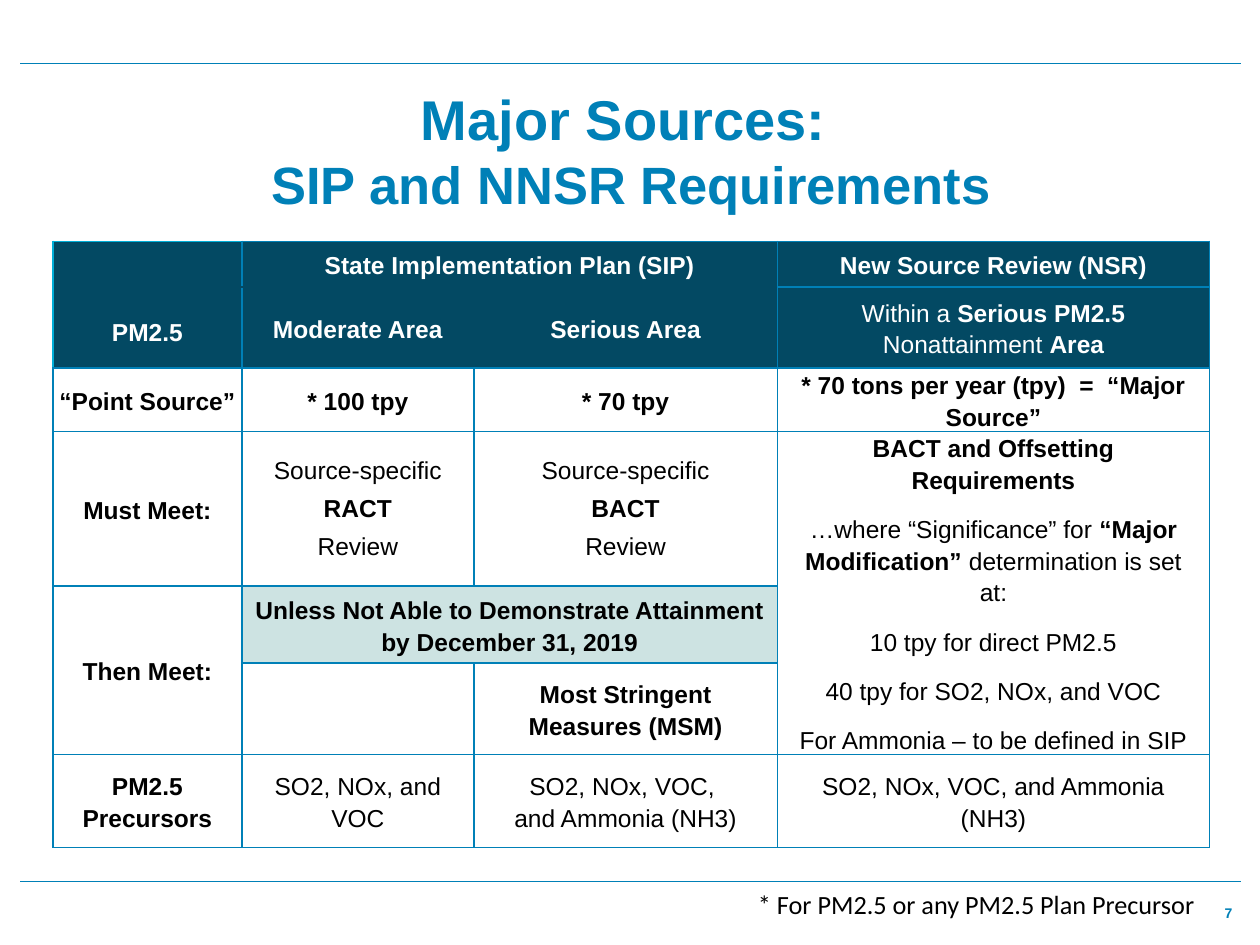
from lxml import etree
from pptx import Presentation
from pptx.dml.color import RGBColor
from pptx.enum import shapes, text
from pptx.oxml import ns
from pptx.util import Pt

BLUE = RGBColor(0x00, 0x80, 0xB7)
CYAN = RGBColor(0x00, 0xAF, 0xD8)
NAVY = RGBColor(0x03, 0x49, 0x63)
MINT = RGBColor(0xCD, 0xE3, 0xE2)
WHITE = RGBColor(0xFF, 0xFF, 0xFF)
BLACK = RGBColor(0x00, 0x00, 0x00)

LEFT, WIDTH = 30.24, 660.96
COLUMNS = [108, 132.5, 173.5, 247]
ROWS = [26, 46.3, 36, 88.5, 44, 52, 53]
SERIOUS_REVIEW = ["BACT and Offsetting Requirements"]

# Cell contents by (row, column); a bar switches between plain and bold
CELLS = {
    (0, 0): ["|PM2.5"],
    (0, 1): ["|State Implementation Plan (SIP)"],
    (0, 3): ["|New Source Review (NSR)"],
    (1, 1): ["|Moderate Area"],
    (1, 2): ["|Serious Area"],
    (1, 3): ["Within a |Serious PM2.5| Nonattainment |Area"],
    (2, 0): ["|“Point Source”"],
    (2, 1): ["|* 100 tpy"],
    (2, 2): ["|* 70 tpy"],
    (2, 3): ["|* 70 tons per year (tpy)\u00a0 =\u00a0 “Major Source”".replace("\u00a0", " ")],
    (3, 0): ["|Must Meet:"],
    (3, 1): ["Source-specific", "|RACT", "Review"],
    (3, 2): ["Source-specific", "|BACT", "Review"],
    (3, 3): ["|BACT and Offsetting Requirements",
             "…where “Significance” for |“Major Modification”| determination is set at:",
             "10 tpy for direct PM2.5",
             "40 tpy for SO2, NOx, and VOC",
             "For Ammonia – to be defined in SIP"],
    (4, 0): ["|Then Meet:"],
    (4, 1): ["|Unless Not Able to Demonstrate Attainment by December 31, 2019"],
    (5, 2): ["|Most Stringent Measures (MSM)"],
    (6, 0): ["|PM2.5 Precursors"],
    (6, 1): ["SO2, NOx, and VOC"],
    (6, 2): ["SO2, NOx, VOC, ", "and Ammonia (NH3)"],
    (6, 3): ["SO2, NOx, VOC, and Ammonia (NH3)"],
}
MERGES = [((0, 0), (1, 0)), ((0, 1), (0, 2)), ((3, 3), (5, 3)),
          ((4, 0), (5, 0)), ((4, 1), (4, 2))]

# Border colours that differ from blue: sides are L, R, T, B
BORDERS = {
    (0, 0): {"L": CYAN, "T": CYAN},
    (1, 0): {"L": CYAN},
    (0, 1): {"B": NAVY},
    (0, 2): {"B": NAVY},
    (1, 1): {"T": NAVY, "R": NAVY},
    (1, 2): {"T": NAVY, "L": NAVY},
}


def add_run(paragraph, words, size=14, font="Arial", color=BLACK, bold=False):
    run = paragraph.add_run()
    run.text = words
    run.font.size, run.font.name, run.font.bold = Pt(size), font, bold
    run.font.color.rgb = color


def write(frame, paragraphs, align=text.PP_ALIGN.CENTER, spacing=None, after=None, **style):
    for i, words in enumerate(paragraphs):
        paragraph = frame.add_paragraph() if i else frame.paragraphs[0]
        paragraph.alignment = align
        if spacing:
            paragraph.line_spacing = spacing
        if after is not None:
            paragraph.space_after = Pt(after)
        for j, part in enumerate(words.split("|")):
            if part:
                add_run(paragraph, part, bold=j % 2 == 1, **style)


def add_note(slide, words, left, top, width, height, **style):
    note = slide.shapes.add_textbox(Pt(left), Pt(top), Pt(width), Pt(height))
    note.text_frame.word_wrap = True
    write(note.text_frame, [words], align=text.PP_ALIGN.RIGHT, **style)
    return note.text_frame


def add_rule(slide, y):
    rule = slide.shapes.add_connector(shapes.MSO_CONNECTOR.STRAIGHT,
                                      Pt(11.5), Pt(y), Pt(709.2), Pt(y))
    rule.line.color.rgb, rule.line.width = BLUE, Pt(0.5)
    etree.SubElement(rule._element.spPr, ns.qn("a:effectLst"))


def set_borders(cell, colors):
    properties = cell._tc.get_or_add_tcPr()
    for i, side in enumerate("LRTB"):
        line = etree.Element(ns.qn(f"a:ln{side}"), w=str(Pt(1)))
        fill = etree.SubElement(line, ns.qn("a:solidFill"))
        etree.SubElement(fill, ns.qn("a:srgbClr"), val=str(colors.get(side, BLUE)))
        properties.insert(i, line)


def format_cell(cell, row, column):
    fill = NAVY if row < 2 else MINT if (row, column) in [(4, 1), (4, 2)] else None
    if fill is None:
        cell.fill.background()
    else:
        cell.fill.solid()
        cell.fill.fore_color.rgb = fill
    set_borders(cell, BORDERS.get((row, column), {}))
    cell.vertical_anchor = text.MSO_ANCHOR.MIDDLE
    side = 3.6 if (row, column) == (2, 0) else 6.5
    cell.margin_left = cell.margin_right = Pt(side)
    cell.margin_top = cell.margin_bottom = 0


def add_requirements(slide):
    table = slide.shapes.add_table(len(ROWS), len(COLUMNS), Pt(LEFT), Pt(138),
                                   Pt(WIDTH), Pt(337)).table
    table.first_row = table.horz_banding = False
    for column, width in zip(table.columns, COLUMNS):
        column.width = Pt(width)
    for row, height in zip(table.rows, ROWS):
        row.height = Pt(height)
    for row in range(len(ROWS)):
        for column in range(len(COLUMNS)):
            format_cell(table.cell(row, column), row, column)
    for first, last in MERGES:
        table.cell(*first).merge(table.cell(*last))

    for (row, column), paragraphs in CELLS.items():
        review = row == 3 and column in (1, 2)
        precursors = (row, column) == (6, 2)
        write(table.cell(row, column).text_frame, paragraphs,
              spacing=None if review else 1.15,
              after=6 if review else 0 if precursors else 10,
              color=WHITE if row < 2 else BLACK)

    # The row heading sits low in its two-row cell
    heading = table.cell(0, 0)
    heading.vertical_anchor = text.MSO_ANCHOR.BOTTOM
    heading.margin_bottom = Pt(12)


def add_title(slide):
    title = slide.shapes.title
    title.left, title.top, title.width, title.height = Pt(LEFT), Pt(45.4), Pt(WIDTH), Pt(80.6)
    title.text_frame.vertical_anchor = text.MSO_ANCHOR.MIDDLE
    write(title.text_frame, ["|Major Sources: "], size=32, color=BLUE)
    lines = title.text_frame.paragraphs[0]
    lines.add_line_break()
    add_run(lines, "SIP and NNSR Requirements", size=30, color=BLUE, bold=True)


def main():
    deck = Presentation()
    deck.slide_width, deck.slide_height = Pt(720), Pt(540)
    slide = deck.slides.add_slide(deck.slide_layouts[0])
    subtitle = slide.placeholders[1]._element
    subtitle.getparent().remove(subtitle)

    # Rules above and below the content
    for y in (36.5, 503.5):
        add_rule(slide, y)

    add_title(slide)
    add_requirements(slide)

    # Page number and footnote
    page = add_note(slide, "|7", 666, 503.5, 43.2, 36.5, size=8, color=BLUE)
    page.vertical_anchor = text.MSO_ANCHOR.MIDDLE
    page.margin_left = page.margin_right = Pt(5)
    page.margin_top = page.margin_bottom = Pt(3)
    add_note(slide, "* For PM2.5 or any PM2.5 Plan Precursor", 365.8, 504, 324, 25.2,
             size=15, font="Calibri")

    deck.save("out.pptx")


if __name__ == "__main__":
    main()
